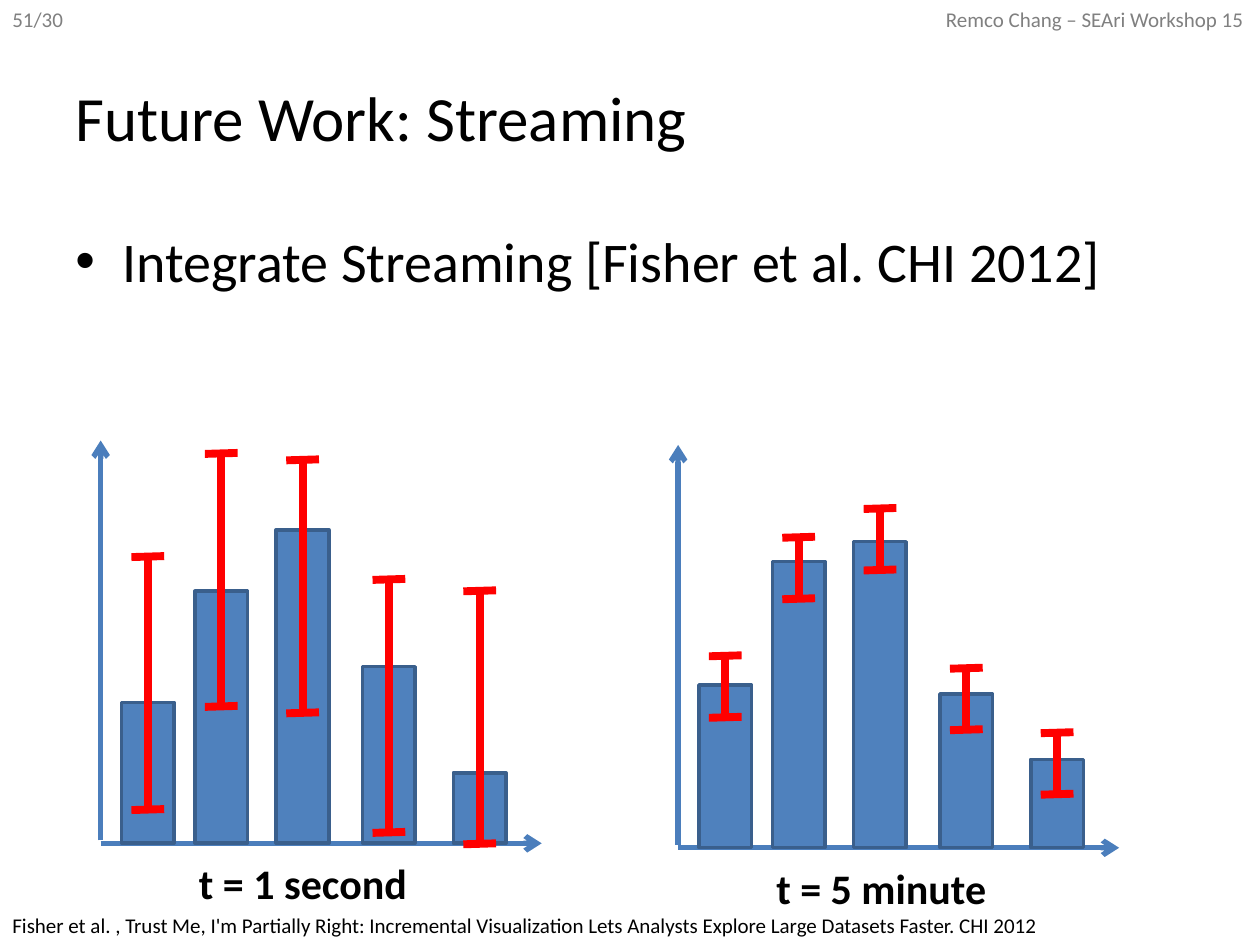
from dataclasses import dataclass

from lxml import etree
from pptx import Presentation
from pptx import util as u
from pptx.dml.color import RGBColor
from pptx.enum import shapes, text
from pptx.oxml.ns import qn


@dataclass(frozen=True)
class Theme:
    font: str = "Calibri"
    ink: str = "000000"
    muted: str = "808080"
    axis: str = "4B7EBC"
    bar: str = "4F81BD"
    bar_edge: str = "3A5F8C"
    error: str = "FF0000"
    title_size: int = 36
    body_size: int = 32
    label_size: int = 24
    small_size: int = 12
    axis_width: float = 3
    bar_edge_width: float = 2
    error_width: float = 4.5


THEME = Theme()

TITLE = "Future Work: Streaming"
BULLET = "Integrate Streaming [Fisher et al. CHI 2012]"
PAGE = "51/30"
AUTHOR = "Remco Chang – SEAri Workshop 15"
SOURCE = (
    "Fisher et al. , Trust Me, I'm Partially Right: Incremental Visualization "
    "Lets Analysts Explore Large Datasets Faster. CHI 2012"
)

PLOTS = [
    {
        "label": "t = 1 second",
        "origin": (2.03, 17.0),
        "bars": [2.84, 5.08, 6.32, 3.56, 1.42],
        "error_tops": [5.77, 7.85, 7.72, 5.31, 5.08],
        "error_length": 5.08,
    },
    {
        "label": "t = 5 minute",
        "origin": (13.67, 17.09),
        "bars": [3.28, 5.77, 6.17, 3.1, 1.78],
        "error_tops": [3.86, 6.25, 6.83, 3.61, 2.31],
        "error_length": 1.22,
    },
]

BAR_OFFSETS = [0.42, 1.9, 3.54, 5.28, 7.11]
BAR_WIDTH = 1.06
AXIS_LENGTH = 8.89
AXIS_HEIGHT = 8.12
AXIS_GAP = 0.06
CAP_HALF = 0.33
CAP_TILT = 0.02


def color(value):
    return RGBColor.from_string(value)


def write(shape, content, size, ink=THEME.ink, bold=False, wrap=True):
    frame = shape.text_frame
    frame.text = content
    frame.word_wrap = wrap
    paragraph = frame.paragraphs[0]
    paragraph.alignment = text.PP_ALIGN.LEFT
    font = paragraph.runs[0].font
    font.name = THEME.font
    font.size = u.Pt(size)
    font.bold = bold
    font.color.rgb = color(ink)
    return paragraph


def add_text(slide, box, content, size, **style):
    shape = slide.shapes.add_textbox(*map(u.Cm, box))
    return write(shape, content, size, **style)


def add_bullet(paragraph, indent):
    properties = paragraph._p.get_or_add_pPr()
    properties.set("marL", str(u.Cm(indent)))
    properties.set("indent", str(-u.Cm(indent)))
    etree.SubElement(properties, qn("a:buFont")).set("typeface", "Arial")
    etree.SubElement(properties, qn("a:buChar")).set("char", "•")


def add_line(group, start, end, ink, width, arrow=False):
    line = group.shapes.add_connector(
        shapes.MSO_CONNECTOR.STRAIGHT, *map(u.Cm, (*start, *end))
    )
    line.line.color.rgb = color(ink)
    line.line.width = u.Pt(width)
    if arrow:
        etree.SubElement(line.line._get_or_add_ln(), qn("a:tailEnd")).set("type", "arrow")
    etree.SubElement(line._element.spPr, qn("a:effectLst"))


def add_axes(group, left, base):
    style = (THEME.axis, THEME.axis_width, True)
    add_line(group, (left, base - AXIS_GAP), (left, base - AXIS_HEIGHT), *style)
    add_line(group, (left, base), (left + AXIS_LENGTH, base), *style)


def add_bar(group, left, base, height):
    bar = group.shapes.add_shape(
        shapes.MSO_SHAPE.RECTANGLE,
        *map(u.Cm, (left, base - height, BAR_WIDTH, height)),
    )
    bar.shadow.inherit = False
    bar.fill.solid()
    bar.fill.fore_color.rgb = color(THEME.bar)
    bar.line.color.rgb = color(THEME.bar_edge)
    bar.line.width = u.Pt(THEME.bar_edge_width)


def add_error(group, center, top, length):
    style = (THEME.error, THEME.error_width)
    bottom = top + length
    add_line(group, (center, top), (center, bottom), *style)
    for y, left_y in ((bottom, bottom + CAP_TILT), (top - CAP_TILT, top)):
        add_line(group, (center + CAP_HALF, y), (center - CAP_HALF, left_y), *style)


def add_plot(slide, plot):
    left, base = plot["origin"]
    bars = slide.shapes.add_group_shape()
    add_axes(bars, left, base)
    for offset, height in zip(BAR_OFFSETS, plot["bars"]):
        add_bar(bars, left + offset, base, height)
    errors = slide.shapes.add_group_shape()
    for offset, top in zip(BAR_OFFSETS, plot["error_tops"]):
        center = left + offset + BAR_WIDTH / 2
        add_error(errors, center, base - top, plot["error_length"])
    add_text(slide, (left + 1.73, base + 0.17, 4.76, 1.27), plot["label"],
             THEME.label_size, bold=True, wrap=False)


def main():
    presentation = Presentation()
    presentation.slide_width = u.Cm(25.4)
    presentation.slide_height = u.Cm(19.05)
    slide = presentation.slides.add_slide(presentation.slide_layouts[5])

    for box, content in (((0, 0, 1.63, 0.77), PAGE), ((18.82, 0, 6.58, 0.77), AUTHOR)):
        add_text(slide, box, content, THEME.small_size, ink=THEME.muted, wrap=False)

    title = slide.shapes.title
    title.left, title.top, title.width, title.height = map(u.Cm, (1.27, 0.76, 22.86, 3.18))
    write(title, TITLE, THEME.title_size)
    title.text_frame.vertical_anchor = text.MSO_ANCHOR.MIDDLE

    bullet = add_text(slide, (1.27, 4.45, 22.86, 4.01), BULLET, THEME.body_size)
    add_bullet(bullet, 0.95)

    for plot in PLOTS:
        add_plot(slide, plot)
    add_text(slide, (0, 18.28, 23.7, 0.77), SOURCE, THEME.small_size)

    presentation.save("out.pptx")


if __name__ == "__main__":
    main()
